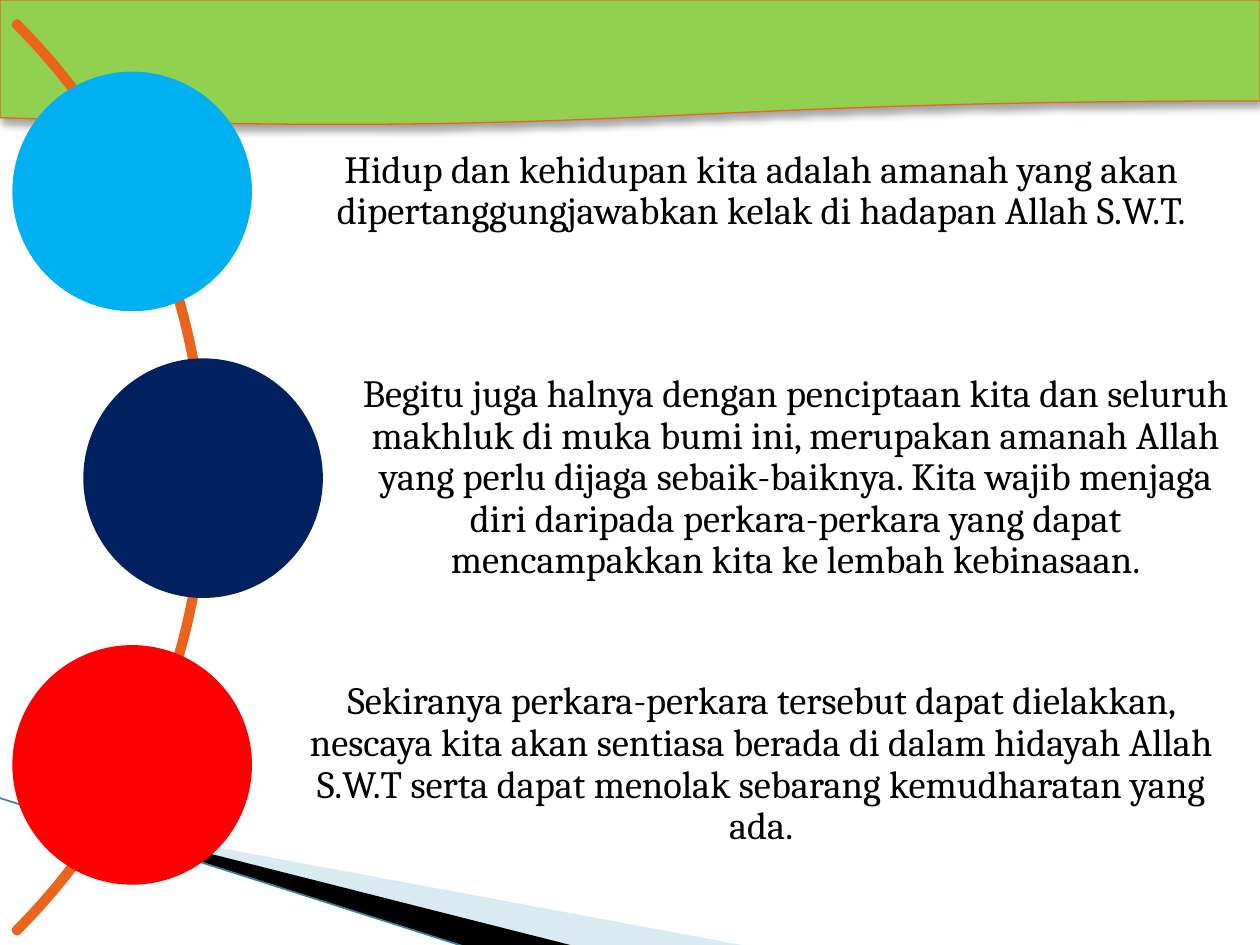
from lxml.etree import SubElement
from pptx import Presentation
from pptx.dml.color import RGBColor
from pptx.enum.shapes import MSO_CONNECTOR, MSO_SHAPE as Shape
from pptx.enum.text import MSO_ANCHOR, PP_ALIGN
from pptx.oxml.ns import qn
from pptx.util import Cm, Pt


def paint(shape, fill=None, line=None, width=0):
    """Set fill and outline from hex strings; None means there is none."""
    shape.shadow.inherit = False
    for part, color in ((shape.fill, fill), (shape.line.fill, line)):
        if color:
            part.solid()
            part.fore_color.rgb = RGBColor.from_string(color)
        else:
            part.background()
    if line:
        shape.line.width = Pt(width)


def add_alpha(color_element, percent):
    SubElement(color_element, qn("a:alpha"), val=str(percent * 1000))


presentation = Presentation()
presentation.slide_width, presentation.slide_height = Cm(25.4), Cm(19.05)
slide = presentation.slides.add_slide(presentation.slide_layouts[6])
shapes = slide.shapes

# Corner wedges and the thin line beside them
wedges = [
    ("A0CBDC", 40, [(1.4, 16.53), (15.11, 19.08), (11.58, 19.08), (1.4, 16.5)]),
    ("000000", 100, [(1.35, 16.48), (11.61, 19.08), (9.45, 19.1), (1.37, 16.51)]),
]
for color, opacity, points in wedges:
    start, *others = [(Cm(x), Cm(y)) for x, y in points]
    builder = shapes.build_freeform(*start)
    builder.add_line_segments(others)
    wedge = builder.convert_to_shape()
    paint(wedge, color)
    if opacity < 100:
        add_alpha(wedge._element.spPr.find(qn("a:solidFill"))[0], opacity)

corner_line = shapes.add_connector(
    MSO_CONNECTOR.STRAIGHT, Cm(-0.03), Cm(16.08), Cm(9.42), Cm(19.1))
corner_line.line.color.rgb = RGBColor.from_string("31849B")
corner_line.line.width = Pt(0.95)
SubElement(corner_line._element.spPr, qn("a:effectLst"))

# Wavy banner with a soft shadow below it
banner = shapes.add_shape(Shape.FLOWCHART_DOCUMENT, 0, 0, Cm(25.4), Cm(2.54))
paint(banner, "92D050", "EB641B", 0.75)
shadow = SubElement(
    banner._element.spPr.find(qn("a:effectLst")), qn("a:outerShdw"),
    blurRad=str(Pt(4)), dist=str(Pt(3)), dir="5400000", rotWithShape="0")
add_alpha(SubElement(shadow, qn("a:srgbClr"), val="000000"), 35)

# Arc that joins the circles
arc = shapes.add_shape(
    Shape.BLOCK_ARC, Cm(-21.77), Cm(-3.33), Cm(25.91), Cm(25.91))
for index, value in enumerate((189, 27, 0.002)):
    arc.adjustments[index] = value
paint(arc, None, "EB641B", 4.33)

# Each row: circle colour, circle left, text left, text height, text
rows = [
    ("00B0F0", 0.25, 2.67, 3.86,
     "Hidup dan kehidupan kita adalah amanah yang akan "
     "dipertanggungjawabkan kelak di hadapan Allah S.W.T."),
    ("002060", 1.68, 4.06, 6.15,
     "Begitu juga halnya dengan penciptaan kita dan seluruh makhluk di muka "
     "bumi ini, merupakan amanah Allah yang perlu dijaga sebaik-baiknya. Kita "
     "wajib menjaga diri daripada perkara-perkara yang dapat mencampakkan "
     "kita ke lembah kebinasaan."),
    ("FF0000", 0.25, 2.67, 4.75,
     "Sekiranya perkara-perkara tersebut dapat dielakkan, nescaya kita akan "
     "sentiasa berada di dalam hidayah Allah S.W.T serta dapat menolak "
     "sebarang kemudharatan yang ada."),
]
text_right, diameter = 25.12, 4.83
first_middle, row_pitch = 3.86, 5.78
frame_format = {
    "word_wrap": True, "vertical_anchor": MSO_ANCHOR.MIDDLE,
    "margin_left": Cm(3.05), "margin_right": Cm(0.15),
    "margin_top": Cm(0.15), "margin_bottom": Cm(0.15),
}
paragraph_format = {"alignment": PP_ALIGN.CENTER, "line_spacing": 0.9}
font_format = {"name": "Cambria", "size": Pt(22)}

for index, (color, circle_left, text_left, height, text) in enumerate(rows):
    middle = first_middle + index * row_pitch
    box = shapes.add_textbox(Cm(text_left), Cm(middle - height / 2),
                             Cm(text_right - text_left), Cm(height))
    frame = box.text_frame
    paragraph = frame.paragraphs[0]
    paragraph.text = text
    font = paragraph.runs[0].font
    font.color.rgb = RGBColor.from_string("000000")
    for target, values in ((frame, frame_format), (font, font_format),
                           (paragraph, paragraph_format)):
        for name, value in values.items():
            setattr(target, name, value)

    circle = shapes.add_shape(Shape.OVAL, Cm(circle_left),
                              Cm(middle - diameter / 2), Cm(diameter), Cm(diameter))
    paint(circle, color)

presentation.save("out.pptx")
